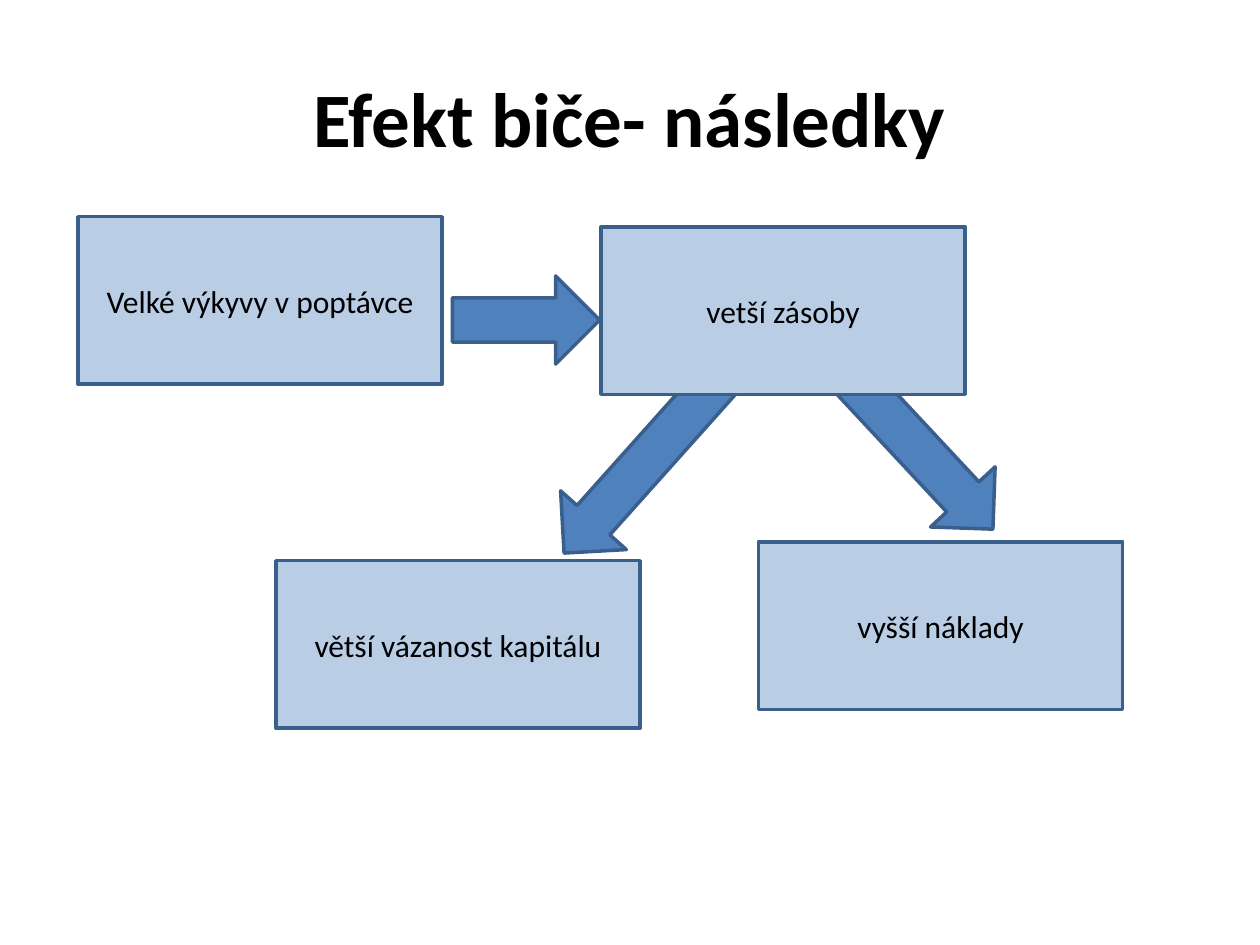
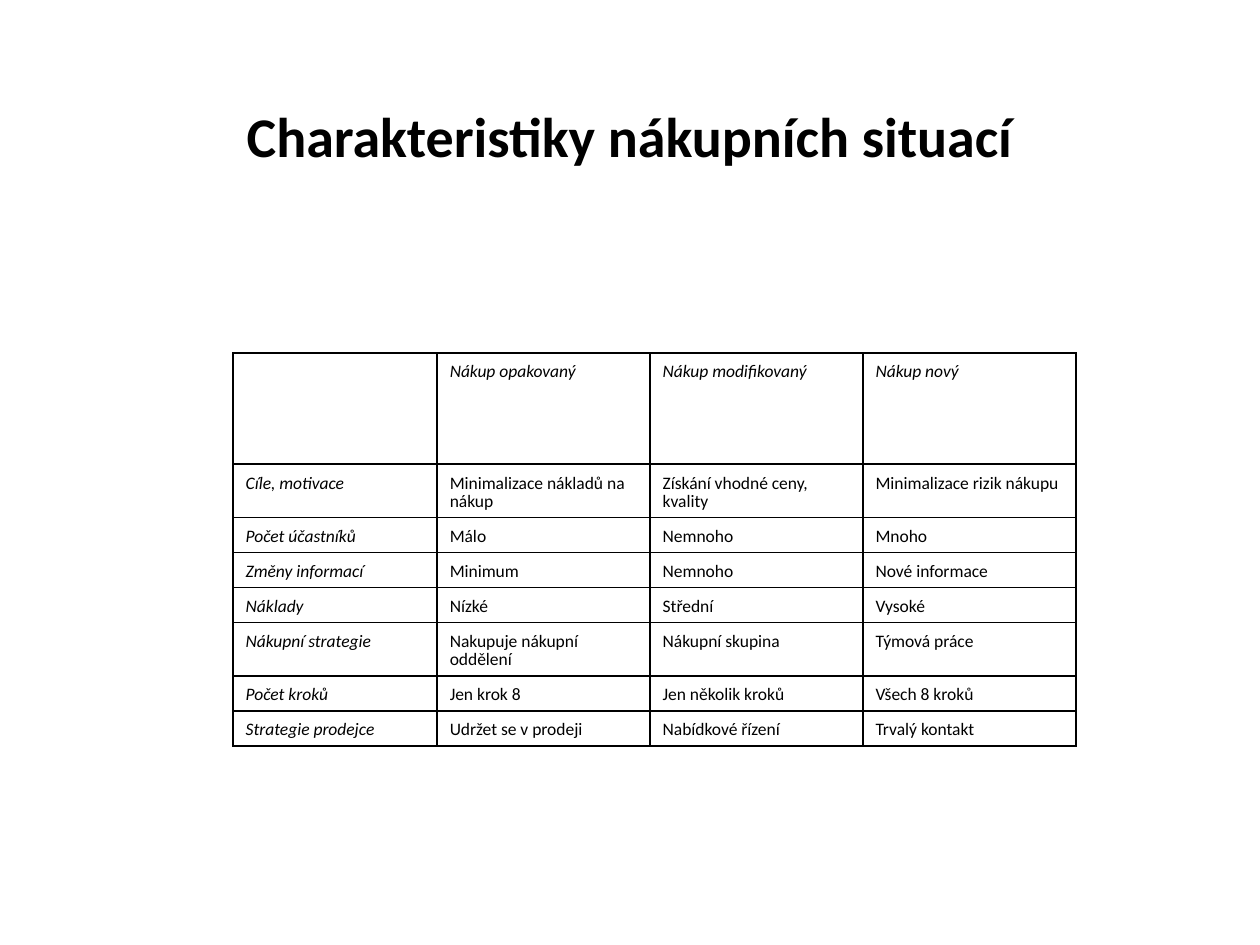
from dataclasses import dataclass

from lxml import etree
from pptx import Presentation
from pptx.dml.color import RGBColor
from pptx.enum.shapes import MSO_SHAPE
from pptx.enum.text import MSO_ANCHOR, MSO_AUTO_SIZE, PP_ALIGN
from pptx.oxml.ns import qn
from pptx.util import Inches, Pt

RECTANGLE = MSO_SHAPE.RECTANGLE
DOWN_ARROW = MSO_SHAPE.DOWN_ARROW
RIGHT_ARROW = MSO_SHAPE.RIGHT_ARROW
MIDDLE = MSO_ANCHOR.MIDDLE
CENTER = PP_ALIGN.CENTER
NO_AUTOFIT = MSO_AUTO_SIZE.NONE
TITLE_ONLY = 5

WIDTH, HEIGHT = Inches(10), Inches(7.5)
UNIT = WIDTH / 100
FONT = "Calibri"
COLORS = {"text": "000000", "arrow": "4F81BD", "outline": "3A5F8C", "card": "B9CDE5", "border": "000000"}


@dataclass
class Box:
    """A region measured in columns and rows of a grid 100 columns wide."""

    left: float
    top: float
    width: float
    height: float

    def inner(self, left, top, width, height):
        """Return a box placed relative to this one."""
        return Box(self.left + left, self.top + top, width, height)

    def emu(self):
        """Return left, top, width and height in slide lengths."""
        return [round(side * UNIT) for side in (self.left, self.top, self.width, self.height)]


TITLE_BOX = Box(5, 3, 90, 12.5)
DIAGRAM_BOX = Box(6.2, 17.2, 82.9, 40.6)
TABLE_BOX = Box(18.5, 28, 66.9, 31.1)

CARD_SIZE = (28.9, 13.3)
CONSEQUENCES = [
    ("Velké výkyvy v poptávce", 0, 0),
    ("vetší zásoby", 41.5, 0.8),
    ("větší vázanost kapitálu", 15.7, 27.3),
    ("vyšší náklady", 54, 25.8),
]
ARROWS = [
    (DOWN_ARROW, 317, (63, 9.3, 7, 17.9)),
    (DOWN_ARROW, 41.8, (42.4, 7.5, 7, 22)),
    (RIGHT_ARROW, 0, (29.7, 4.7, 11.7, 7)),
]

COLUMN_WEIGHTS = [1.62, 1.69, 1.69, 1.69]
HEADER_ROW, DOUBLE_ROW, SINGLE_ROW = 0.89, 0.42, 0.28
ROW_WEIGHTS = [HEADER_ROW, DOUBLE_ROW] + [SINGLE_ROW] * 3 + [DOUBLE_ROW] + [SINGLE_ROW] * 2
SITUATIONS = [
    ["", "Nákup opakovaný", "Nákup modifikovaný", "Nákup nový"],
    ["Cíle, motivace", "Minimalizace nákladů na nákup", "Získání vhodné ceny, kvality", "Minimalizace rizik nákupu"],
    ["Počet účastníků", "Málo", "Nemnoho", "Mnoho"],
    ["Změny informací", "Minimum", "Nemnoho", "Nové informace"],
    ["Náklady", "Nízké", "Střední", "Vysoké"],
    ["Nákupní strategie", "Nakupuje nákupní oddělení", "Nákupní skupina", "Týmová práce"],
    ["Počet kroků", "Jen krok 8", "Jen několik kroků", "Všech 8 kroků"],
    ["Strategie prodejce", "Udržet se v prodeji", "Nabídkové řízení", "Trvalý kontakt"],
]


def color(name):
    """Return a named palette colour."""
    return RGBColor.from_string(COLORS[name])


def add_run(paragraph, text, size, bold=False, italic=False):
    """Add one formatted run to a paragraph."""
    run = paragraph.add_run()
    run.text = text
    run.font.name = FONT
    run.font.size = Pt(size)
    run.font.bold = bold
    run.font.italic = italic
    run.font.color.rgb = color("text")


def set_insets(holder, left, top, right, bottom):
    """Set the inner margins of a text frame or table cell in inches."""
    holder.margin_left, holder.margin_top = Inches(left), Inches(top)
    holder.margin_right, holder.margin_bottom = Inches(right), Inches(bottom)


def add_titled_slide(deck, heading, size):
    """Add a slide with the shared title style."""
    slide = deck.slides.add_slide(deck.slide_layouts[TITLE_ONLY])
    title = slide.shapes.title
    title.left, title.top, title.width, title.height = TITLE_BOX.emu()
    frame = title.text_frame
    frame.word_wrap = True
    frame.auto_size = NO_AUTOFIT
    frame.vertical_anchor = MIDDLE
    frame.paragraphs[0].alignment = CENTER
    add_run(frame.paragraphs[0], heading, size, bold=True)
    return slide


def add_block(slide, preset, box, fill):
    """Add an outlined, shadowless preset shape."""
    block = slide.shapes.add_shape(preset, *box.emu())
    block.shadow.inherit = False
    block.fill.solid()
    block.fill.fore_color.rgb = color(fill)
    block.line.color.rgb = color("outline")
    block.line.width = Pt(2)
    return block


def draw_consequences(slide, box):
    """Draw the arrows and the cards of the bullwhip diagram."""
    for preset, angle, place in ARROWS:
        add_block(slide, preset, box.inner(*place), "arrow").rotation = angle
    for label, left, top in CONSEQUENCES:
        frame = add_block(slide, RECTANGLE, box.inner(left, top, *CARD_SIZE), "card").text_frame
        frame.word_wrap = True
        frame.vertical_anchor = MIDDLE
        frame.paragraphs[0].alignment = CENTER
        add_run(frame.paragraphs[0], label, 18)


def add_borders(cell):
    """Draw a thin line on all four sides of a cell."""
    properties = cell._tc.get_or_add_tcPr()
    for side in ("a:lnL", "a:lnR", "a:lnT", "a:lnB"):
        line = etree.SubElement(properties, qn(side), w=str(Pt(1)))
        fill = etree.SubElement(line, qn("a:solidFill"))
        etree.SubElement(fill, qn("a:srgbClr"), val=COLORS["border"])


def draw_situations(slide, box):
    """Draw the table that compares buying situations."""
    left, top, width, height = box.emu()
    table = slide.shapes.add_table(len(SITUATIONS), len(COLUMN_WEIGHTS), left, top, width, height).table
    table.first_row = table.horz_banding = False
    for column, weight in zip(table.columns, COLUMN_WEIGHTS):
        column.width = round(width * weight / sum(COLUMN_WEIGHTS))
    for row, weight in zip(table.rows, ROW_WEIGHTS):
        row.height = round(height * weight / sum(ROW_WEIGHTS))
    for row_index, entries in enumerate(SITUATIONS):
        for column_index, entry in enumerate(entries):
            cell = table.cell(row_index, column_index)
            add_borders(cell)
            cell.fill.background()
            set_insets(cell, 0.1, 0.08, 0.1, 0.05)
            if entry:
                paragraph = cell.text_frame.paragraphs[0]
                paragraph.line_spacing = 0.87
                add_run(paragraph, entry, 10, italic=row_index == 0 or column_index == 0)


def main():
    """Build and save both slides."""
    deck = Presentation()
    deck.slide_width, deck.slide_height = WIDTH, HEIGHT

    draw_consequences(add_titled_slide(deck, "Efekt biče- následky", 44), DIAGRAM_BOX)

    situations = add_titled_slide(deck, "Charakteristiky nákupních situací", 32)
    heading = situations.shapes.title.text_frame
    set_insets(heading, 0, 0.03, 0, 0)
    heading.paragraphs[0].line_spacing = Pt(58)
    draw_situations(situations, TABLE_BOX)

    deck.save("out.pptx")


if __name__ == "__main__":
    main()
